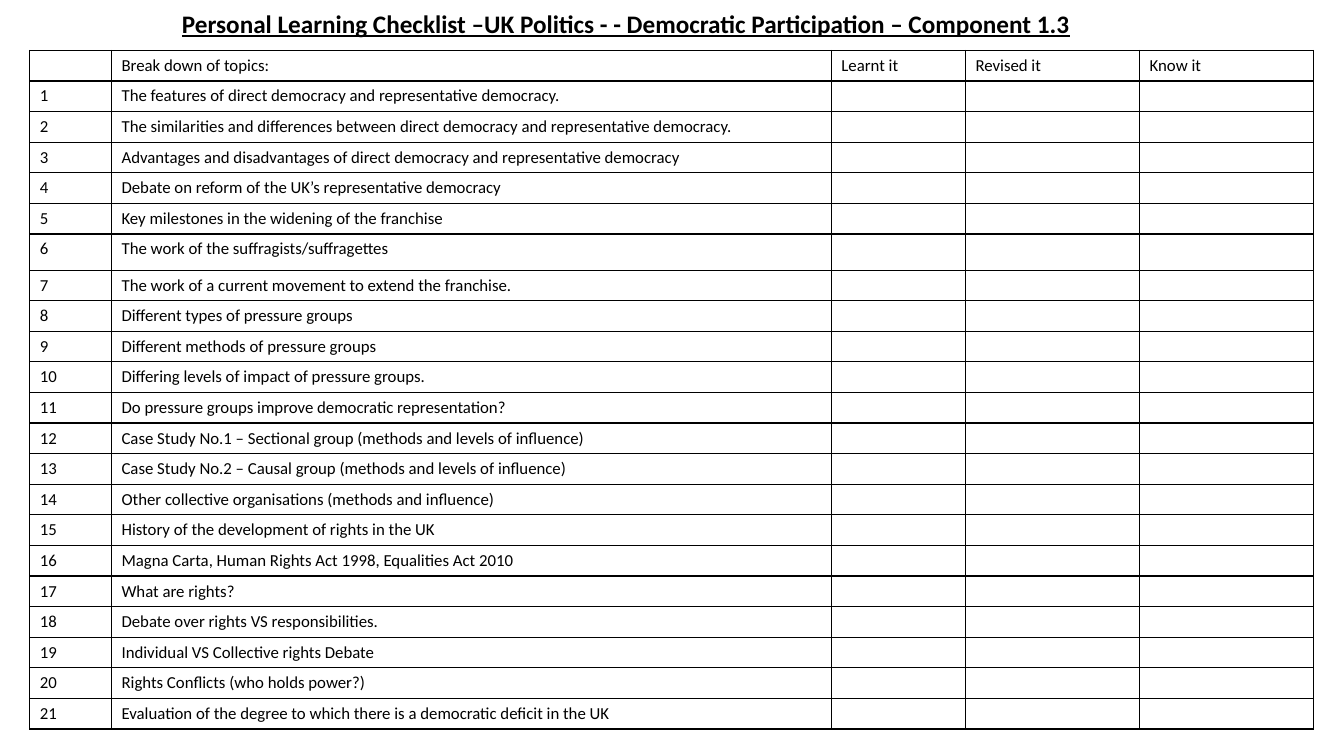
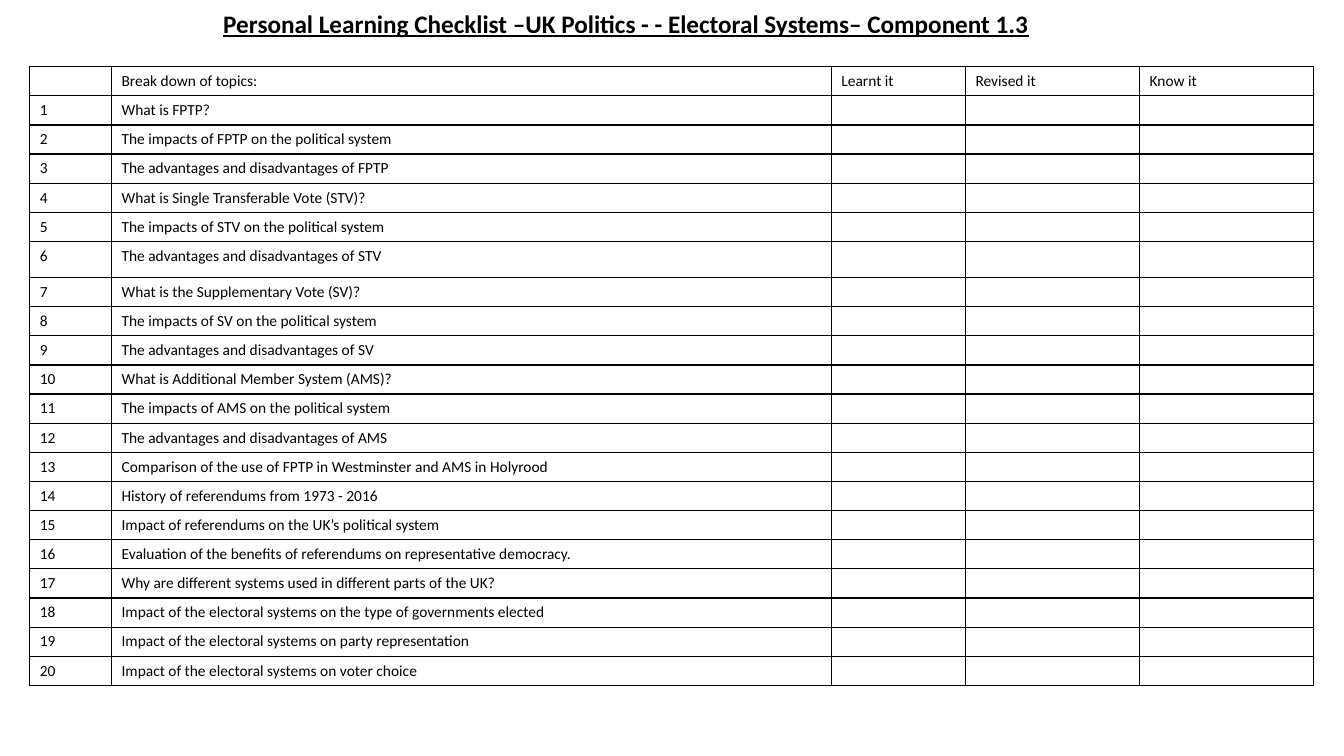
from dataclasses import dataclass

from lxml import etree
from pptx import Presentation
from pptx.dml.color import RGBColor
from pptx.enum.text import MSO_ANCHOR, MSO_AUTO_SIZE, PP_ALIGN
from pptx.oxml.ns import qn
from pptx.util import Cm, Pt

CENTER = PP_ALIGN.CENTER
MIDDLE = MSO_ANCHOR.MIDDLE
NO_AUTOFIT = MSO_AUTO_SIZE.NONE
TITLE_ONLY = 5


# Shared look
@dataclass(frozen=True)
class Theme:
    font: str = "Calibri"
    ink: RGBColor = RGBColor(0x00, 0x00, 0x00)
    paper: RGBColor = RGBColor(0xFF, 0xFF, 0xFF)
    title_size: int = 18
    border_width: int = 1


THEME = Theme()
TABLE_LEFT = 0.75
COLUMN_WIDTHS = (2.06, 18.14, 3.38, 4.39, 4.39)
HEADINGS = ("", "Break down of topics:", "Learnt it", "Revised it", "Know it")
TALL_ROW = 6
TALL_ROW_HEIGHT = 0.91


# Content of each checklist
@dataclass(frozen=True)
class Checklist:
    title: str
    top: float
    row_height: float
    text_size: int
    topics: tuple


PARTICIPATION = Checklist(
    title="Personal Learning Checklist –UK Politics - - Democratic Participation – Component 1.3",
    top=1.27,
    row_height=0.77,
    text_size=12,
    topics=(
        "The features of direct democracy and representative democracy.",
        "The similarities and differences between direct democracy and representative democracy.",
        "Advantages and disadvantages of direct democracy and representative democracy",
        "Debate on reform of the UK’s representative democracy",
        "Key milestones in the widening of the franchise",
        "The work of the suffragists/suffragettes",
        "The work of a current movement to extend the franchise.",
        "Different types of pressure groups",
        "Different methods of pressure groups",
        "Differing levels of impact of pressure groups.",
        "Do pressure groups improve democratic representation?",
        "Case Study No.1 – Sectional group (methods and levels of influence)",
        "Case Study No.2 – Causal group (methods and levels of influence)",
        "Other collective organisations (methods and influence)",
        "History of the development of rights in the UK",
        "Magna Carta, Human Rights Act 1998, Equalities Act 2010",
        "What are rights?",
        "Debate over rights VS responsibilities.",
        "Individual VS Collective rights Debate",
        "Rights Conflicts (who holds power?)",
        "Evaluation of the degree to which there is a democratic deficit in the UK",
    ),
)

ELECTORAL_SYSTEMS = Checklist(
    title="Personal Learning Checklist –UK Politics - - Electoral Systems– Component 1.3",
    top=1.68,
    row_height=0.73,
    text_size=11,
    topics=(
        "What is FPTP?",
        "The impacts of FPTP on the political system",
        "The advantages and disadvantages of FPTP",
        "What is Single Transferable Vote (STV)?",
        "The impacts of STV on the political system",
        "The advantages and disadvantages of STV",
        "What is the Supplementary Vote (SV)?",
        "The impacts of SV on the political system",
        "The advantages and disadvantages of SV",
        "What is Additional Member System (AMS)?",
        "The impacts of AMS on the political system",
        "The advantages and disadvantages of AMS",
        "Comparison of the use of FPTP in Westminster and AMS in Holyrood",
        "History of referendums from 1973 - 2016",
        "Impact of referendums on the UK’s political system",
        "Evaluation of the benefits of referendums on representative democracy.",
        "Why are different systems used in different parts of the UK?",
        "Impact of the electoral systems on the type of governments elected",
        "Impact of the electoral systems on party representation",
        "Impact of the electoral systems on voter choice",
    ),
)


# Text and cell formatting
def style_font(font, size):
    font.name = THEME.font
    font.size = Pt(size)
    font.color.rgb = THEME.ink


def add_borders(cell):
    properties = cell._tc.get_or_add_tcPr()
    for position, side in enumerate(("lnL", "lnR", "lnT", "lnB")):
        line = etree.Element(qn(f"a:{side}"), w=str(Pt(THEME.border_width)))
        fill = etree.SubElement(line, qn("a:solidFill"))
        etree.SubElement(fill, qn("a:srgbClr"), val=str(THEME.ink))
        properties.insert(position, line)


def fill_cell(cell, text, size):
    para = cell.text_frame.paragraphs[0]
    style_font(para.font, size)
    if text:
        para.add_run().text = text
    else:
        # An empty cell takes its line height from the end mark
        etree.SubElement(para._p, qn("a:endParaRPr"), sz=str(size * 100))
    cell.fill.solid()
    cell.fill.fore_color.rgb = THEME.paper
    add_borders(cell)


# Slide parts
def set_title(slide, text):
    title = slide.shapes.title
    title.left, title.top, title.width, title.height = Cm(0), Cm(0), Cm(31.55), Cm(1.27)
    frame = title.text_frame
    frame.text = text
    frame.word_wrap = True
    frame.auto_size = NO_AUTOFIT
    frame.vertical_anchor = MIDDLE
    para = frame.paragraphs[0]
    para.alignment = CENTER
    para.line_spacing = 0.9
    style_font(para.font, THEME.title_size)
    para.font.bold = True
    para.font.underline = True


def add_checklist_table(slide, checklist):
    rows = [HEADINGS]
    rows += [(str(number), topic, "", "", "") for number, topic in enumerate(checklist.topics, 1)]
    heights = [checklist.row_height] * len(rows)
    heights[TALL_ROW] = TALL_ROW_HEIGHT

    table = slide.shapes.add_table(
        len(rows), len(HEADINGS), Cm(TABLE_LEFT), Cm(checklist.top),
        Cm(sum(COLUMN_WIDTHS)), Cm(sum(heights)),
    ).table
    table.first_row = False
    table.horz_banding = False
    for column, width in zip(table.columns, COLUMN_WIDTHS):
        column.width = Cm(width)
    for row, height, texts in zip(table.rows, heights, rows):
        row.height = Cm(height)
        for cell, text in zip(row.cells, texts):
            fill_cell(cell, text, checklist.text_size)


def add_checklist_slide(deck, checklist):
    slide = deck.slides.add_slide(deck.slide_layouts[TITLE_ONLY])
    set_title(slide, checklist.title)
    add_checklist_table(slide, checklist)


def main():
    deck = Presentation()
    deck.slide_width, deck.slide_height = Cm(33.87), Cm(19.05)
    for checklist in (PARTICIPATION, ELECTORAL_SYSTEMS):
        add_checklist_slide(deck, checklist)
    deck.save("out.pptx")


if __name__ == "__main__":
    main()
